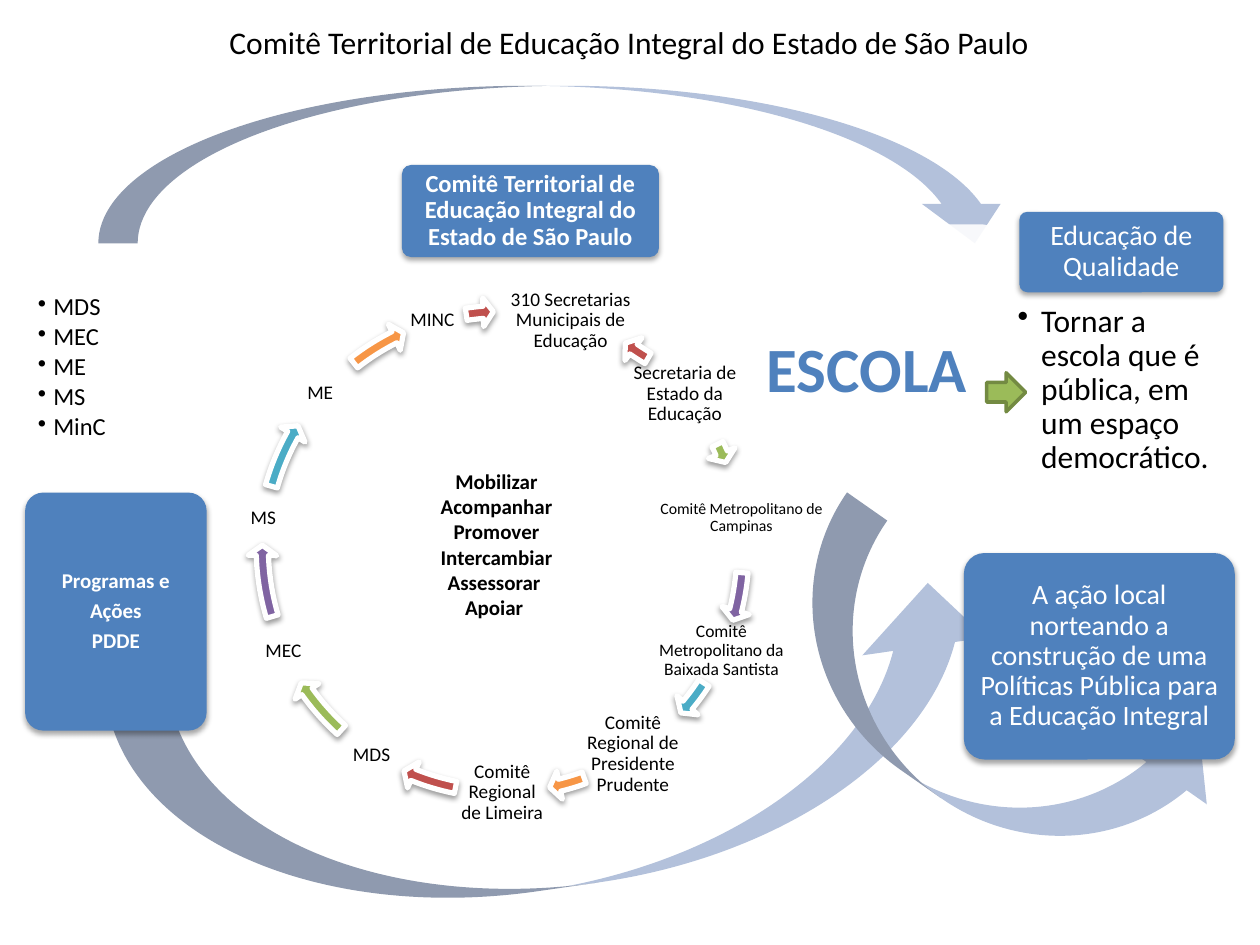
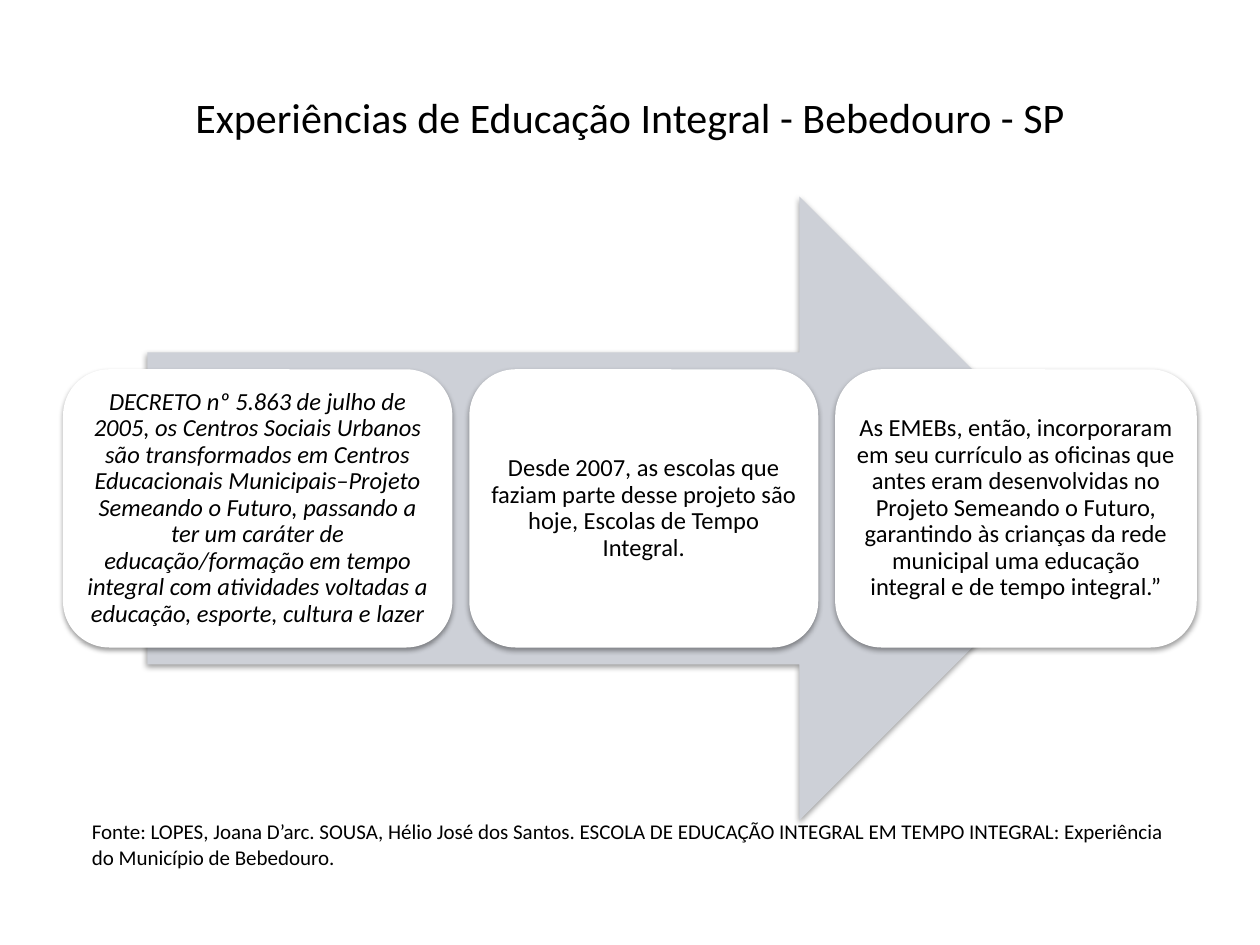
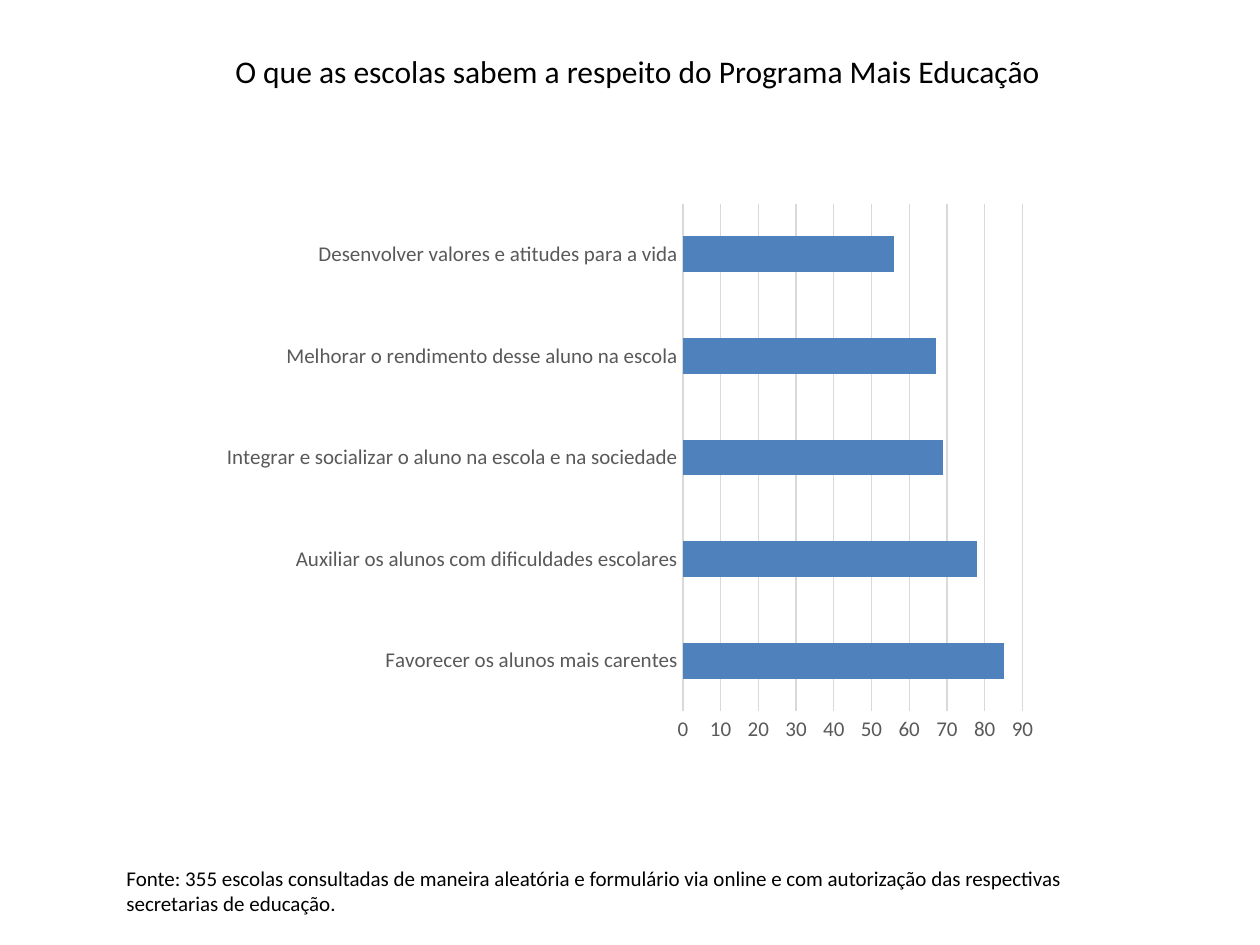
from itertools import cycle

from lxml import etree
from pptx import Presentation
from pptx.chart.data import CategoryChartData
from pptx.dml.color import RGBColor
from pptx.enum.chart import XL_CHART_TYPE as ChartType, XL_TICK_MARK as Tick
from pptx.enum.shapes import MSO_SHAPE as Preset
from pptx.enum.text import MSO_ANCHOR as Anchor, MSO_AUTO_SIZE as AutoSize, PP_ALIGN as Align
from pptx.oxml.ns import qn
from pptx.util import Pt

# Shared style
FONT = "Calibri"
BLACK = RGBColor(0x00, 0x00, 0x00)
WHITE = RGBColor(0xFF, 0xFF, 0xFF)
BLUE = RGBColor(0x4F, 0x81, 0xBD)
PALE_BLUE = RGBColor(0xB3, 0xC1, 0xDB)
GREY_BLUE = RGBColor(0xCD, 0xD0, 0xD7)
RED = RGBColor(0xC0, 0x50, 0x4D)
GREEN = RGBColor(0x9B, 0xBB, 0x59)
DARK_GREEN = RGBColor(0x73, 0x8A, 0x42)
PURPLE = RGBColor(0x80, 0x64, 0xA2)
TEAL = RGBColor(0x4B, 0xAC, 0xC6)
ORANGE = RGBColor(0xF7, 0x96, 0x46)
AXIS_TEXT = RGBColor(0x59, 0x59, 0x59)
GRID = RGBColor(0xD9, 0xD9, 0xD9)

TIGHT = {"line_spacing": 0.9, "alignment": Align.CENTER}
CENTRED = {"alignment": Align.CENTER}
LEFT = {"alignment": Align.LEFT}

# Ring of members: text, place, size
MEMBERS = [
    ("310 Secretarias Municipais de Educação", (282.2, 154, 87.8, 58.3), 11),
    ("Secretaria de Estado da Educação", (351.4, 196.6, 79.9, 56.9), 11),
    ("Comitê Metropolitano de Campinas", (373.7, 264.2, 100, 63.4), 9),
    ("Comitê Metropolitano da Baixada Santista", (367.9, 354.2, 88.6, 36), 10),
    ("Comitê Regional de Presidente Prudente", (334, 398.9, 55.4, 64), 11),
    ("Comitê Regional de Limeira", (260, 417.6, 54, 70.6), 11),
    ("MDS", (194.4, 413.3, 36, 36), 11),
    ("MEC", (144, 354.2, 36, 36), 11),
    ("MS", (132.5, 278, 36, 36), 11),
    ("ME", (152, 206.6, 62, 36), 11),
    ("MINC ", (230.4, 164.9, 36, 36), 11),
]
# End and start of the arrow after each member, in degrees
ARROW_ANGLES = [
    (124.56, 120.46), (335.76, 333.4), (14.13, 4.98), (39.68, 33.09),
    (76.28, 70.16), (111.79, 101.29), (144.49, 132.15), (178.25, 163.45),
    (209.2, 195.83), (243.23, 231.75), (265.38, 261.3),
]
RING_CORNER = (141.8, 169.9)
MOVED_CORNERS = {0: (294.5, -59), 7: (141.8, 167.8)}
RING_SIZE = 290.9

EXPERIENCES = [
    ("DECRETO nº 5.863 de julho de 2005, os Centros Sociais Urbanos são transformados "
     "em Centros Educacionais Municipais–Projeto Semeando o Futuro, passando a ter um "
     "caráter de educação/formação em tempo integral com atividades voltadas a educação, "
     "esporte, cultura e lazer", 222.5, True),
    ("Desde 2007, as escolas que faziam parte desse projeto são hoje, Escolas de Tempo "
     "Integral.", 199.4, False),
    ("As EMEBs, então, incorporaram em seu currículo as oficinas que antes eram "
     "desenvolvidas no Projeto Semeando o Futuro, garantindo às crianças da rede "
     "municipal uma educação integral e de tempo integral.”", 206.6, False),
]

ANSWERS = {
    "Favorecer os alunos mais carentes": 85,
    "Auxiliar os alunos com dificuldades escolares": 78,
    "Integrar e socializar o aluno na escola e na sociedade": 69,
    "Melhorar o rendimento desse aluno na escola": 67,
    "Desenvolver valores e atitudes para a vida": 56,
}


def apply(target, values):
    for name, value in values.items():
        setattr(target, name, value)


def points(place):
    return [Pt(length) for length in place]


def style_font(font, size, color, **extra):
    apply(font, {"name": FONT, "size": Pt(size), **extra})
    font.color.rgb = color


def add_bullet(paragraph, indent):
    props = paragraph._p.get_or_add_pPr()
    props.set("marL", str(Pt(indent)))
    props.set("indent", str(-Pt(indent)))
    etree.SubElement(props, qn("a:buChar")).set("char", "•")


def write(shape, lines, size, color=BLACK, layout=TIGHT, insets=(1.4, 1.4, 1.4, 1.4),
          anchor=Anchor.MIDDLE, bullet=0, **font):
    """Fill a shape with one paragraph per line; insets are left, top, right, bottom."""
    frame = shape.text_frame
    sides = ("margin_left", "margin_top", "margin_right", "margin_bottom")
    apply(frame, {"word_wrap": True, "vertical_anchor": anchor, **dict(zip(sides, points(insets)))})
    for index, line in enumerate(lines):
        paragraph = frame.add_paragraph() if index else frame.paragraphs[0]
        apply(paragraph, layout)
        run = paragraph.add_run()
        run.text = line
        style_font(run.font, size, color, **font)
        if bullet:
            add_bullet(paragraph, bullet)


def add_label(slide, place, lines, size, layout=LEFT, **font):
    label = slide.shapes.add_textbox(*points(place))
    write(label, lines, size, layout=layout, insets=(7.2, 3.6, 7.2, 3.6), anchor=Anchor.TOP, **font)
    label.text_frame.auto_size = AutoSize.SHAPE_TO_FIT_TEXT


def add_alpha(color_parent, percent):
    etree.SubElement(color_parent, qn("a:alpha")).set("val", str(percent * 1000))


def add_shadow(shape, opacity, distance):
    effects = shape._element.spPr.find(qn("a:effectLst"))
    shadow = etree.SubElement(effects, qn("a:outerShdw"), blurRad=str(Pt(3.1)),
                              dist=str(Pt(distance)), dir="5400000", rotWithShape="0")
    add_alpha(etree.SubElement(shadow, qn("a:srgbClr"), val="000000"), opacity)


def add_figure(slide, preset, place, fill, line=None, shadow=None, rotation=0,
               adjust=(), opacity=100):
    """Draw a preset shape; line is (colour, width), shadow is (opacity, distance)."""
    figure = slide.shapes.add_shape(preset, *points(place))
    figure.shadow.inherit = False
    figure.rotation = rotation
    figure.fill.solid()
    figure.fill.fore_color.rgb = fill
    if opacity < 100:
        add_alpha(figure._element.spPr.find(qn("a:solidFill"))[0], opacity)
    if line:
        figure.line.color.rgb, figure.line.width = line[0], Pt(line[1])
    else:
        figure.line.fill.background()
    if shadow:
        add_shadow(figure, *shadow)
    for index, value in enumerate(adjust):
        figure.adjustments[index] = value
    return figure


def add_veil(slide, place, preset=Preset.ROUNDED_RECTANGLE):
    adjust = [0.1] if preset == Preset.ROUNDED_RECTANGLE else []
    return add_figure(slide, preset, place, WHITE, adjust=adjust, opacity=90)


def add_blue_box(slide, place, lines, size, **font):
    box = add_figure(slide, Preset.ROUNDED_RECTANGLE, place, BLUE, shadow=(35, 1.8), adjust=[0.1])
    write(box, lines, size, WHITE, {**TIGHT, "space_after": Pt(4)},
          insets=(2.2, 1.4, 2.2, 1.4), **font)


def add_bullets(veil, lines, size, top, indent):
    write(veil, lines, size, layout={**TIGHT, **LEFT, "space_after": Pt(2)},
          insets=(3, top, 3, 3), anchor=Anchor.TOP, bullet=indent)


def add_ring(slide):
    colors = cycle([RED, GREEN, PURPLE, TEAL, ORANGE])
    for index, (member, angles, color) in enumerate(zip(MEMBERS, ARROW_ANGLES, colors)):
        text, place, size = member
        write(slide.shapes.add_textbox(*points(place)), [text], size)
        end, start = angles
        corner = MOVED_CORNERS.get(index, RING_CORNER)
        # An angle adjustment of 0.6 is one degree
        add_figure(slide, Preset.CIRCULAR_ARROW, (*corner, RING_SIZE, RING_SIZE), color,
                   line=(WHITE, 3), shadow=(38, 1.6),
                   adjust=[0.024, 2.43 * 0.6, end * 0.6, start * 0.6, 0.028])


def build_committee(slide):
    # Programmes and sweep to the school
    programmes = add_veil(slide, (14.4, 144, 146.9, 347.8))
    add_bullets(programmes, ["MDS", "MEC", "ME", "MS", "MinC"], 14, 20, 8.8)
    add_figure(slide, Preset.CURVED_UP_ARROW, (68.4, 363.6, 509.8, 142.6), PALE_BLUE, rotation=351.8)
    add_blue_box(slide, (14.4, 281.5, 103.7, 136), ["Programas e", "Ações", "PDDE"], 12, bold=True)

    # Committee
    add_veil(slide, (223.9, 246.2, 126, 130.3), Preset.OVAL)
    add_figure(slide, Preset.CURVED_DOWN_ARROW, (56.2, 49, 523.4, 90), PALE_BLUE)
    committee = "Comitê Territorial de Educação Integral do Estado de São Paulo"
    add_blue_box(slide, (229.7, 94.3, 146.9, 52.6), [committee], 14, bold=True)

    # School, local action and quality
    add_veil(slide, (425.5, 128.2, 149.8, 151.2))
    add_figure(slide, Preset.CURVED_UP_ARROW, (427, 349.9, 274.3, 112.3), PALE_BLUE, rotation=35)
    add_blue_box(slide, (550.8, 316, 154.8, 118),
                 ["A ação local norteando a construção de uma Políticas Pública para a "
                  "Educação Integral"], 16)
    quality = add_veil(slide, (574.6, 130.3, 131, 174.2))
    add_bullets(quality, ["Tornar a escola que é pública, em um espaço democrático."], 18, 40.3, 13.5)
    add_blue_box(slide, (582.5, 121, 116.6, 46), ["Educação de Qualidade"], 16)
    add_figure(slide, Preset.RIGHT_ARROW, (563.8, 213, 22.3, 22.3), GREEN, line=(DARK_GREEN, 2))

    add_ring(slide)
    add_label(slide, (241.2, 264.2, 85, 94.3),
              ["Mobilizar", "Acompanhar", "Promover", "Intercambiar", "Assessorar ", "Apoiar "],
              12, CENTRED, bold=True)
    add_label(slide, (427, 185, 136.8, 51), ["ESCOLA"], 36, CENTRED, color=BLUE, bold=True)
    add_label(slide, (70.6, 9.4, 578, 29), [committee], 18, CENTRED)


def build_experiences(slide):
    title = slide.shapes.add_textbox(*points((36, 21.6, 648, 90)))
    write(title, ["Experiências de Educação Integral - Bebedouro - SP"], 24, layout=CENTRED)
    add_figure(slide, Preset.RIGHT_ARROW, (84.2, 112.3, 550.8, 356.4), GREY_BLUE, shadow=(38, 1.6))
    left, gap = 36, 9.7
    for text, width, italic in EXPERIENCES:
        step = add_figure(slide, Preset.ROUNDED_RECTANGLE, (left, 211, width, 159), WHITE,
                          shadow=(38, 1.6))
        write(step, [text], 14, insets=(4.2, 4.2, 4.2, 4.2), italic=italic)
        left += width + gap
    add_label(slide, (45.4, 464.4, 629.3, 36),
              ["Fonte: LOPES, Joana D’arc. SOUSA, Hélio José dos Santos. ESCOLA DE EDUCAÇÃO "
               "INTEGRAL EM TEMPO INTEGRAL: Experiência do Município de Bebedouro."], 12)


def add_answers_chart(slide, place):
    data = CategoryChartData()
    data.categories = list(ANSWERS)
    data.add_series("Series 1", list(ANSWERS.values()))
    chart = slide.shapes.add_chart(ChartType.BAR_CLUSTERED, *points(place), data).chart
    apply(chart, {"has_legend": False, "has_title": False})
    style_font(chart.font, 10, BLACK)

    plot = chart.plots[0]
    apply(plot, {"gap_width": 182, "vary_by_categories": False})
    bars = plot.series[0].format.fill
    bars.solid()
    bars.fore_color.rgb = BLUE

    answers, scale = chart.category_axis, chart.value_axis
    for axis in (answers, scale):
        apply(axis, {"major_tick_mark": Tick.NONE, "minor_tick_mark": Tick.NONE})
        style_font(axis.tick_labels.font, 12, AXIS_TEXT)
    apply(scale, {"minimum_scale": 0, "maximum_scale": 90, "major_unit": 10,
                  "has_major_gridlines": True})
    scale.format.line.fill.background()
    for line in (answers.format.line, scale.major_gridlines.format.line):
        line.color.rgb, line.width = GRID, Pt(0.75)


def build_survey(slide):
    add_answers_chart(slide, (120, 110, 480, 320))
    add_label(slide, (127.4, 26, 476, 29),
              ["O que as escolas sabem a respeito do Programa Mais Educação"], 18)
    add_label(slide, (65.2, 491, 595.4, 36),
              ["Fonte: 355 escolas consultadas de maneira aleatória e formulário via online e "
               "com autorização das respectivas secretarias de educação."], 12)


def main():
    deck = Presentation()
    apply(deck, {"slide_width": Pt(720), "slide_height": Pt(540)})
    for build in (build_committee, build_experiences, build_survey):
        build(deck.slides.add_slide(deck.slide_layouts[6]))
    deck.save("out.pptx")


if __name__ == "__main__":
    main()
